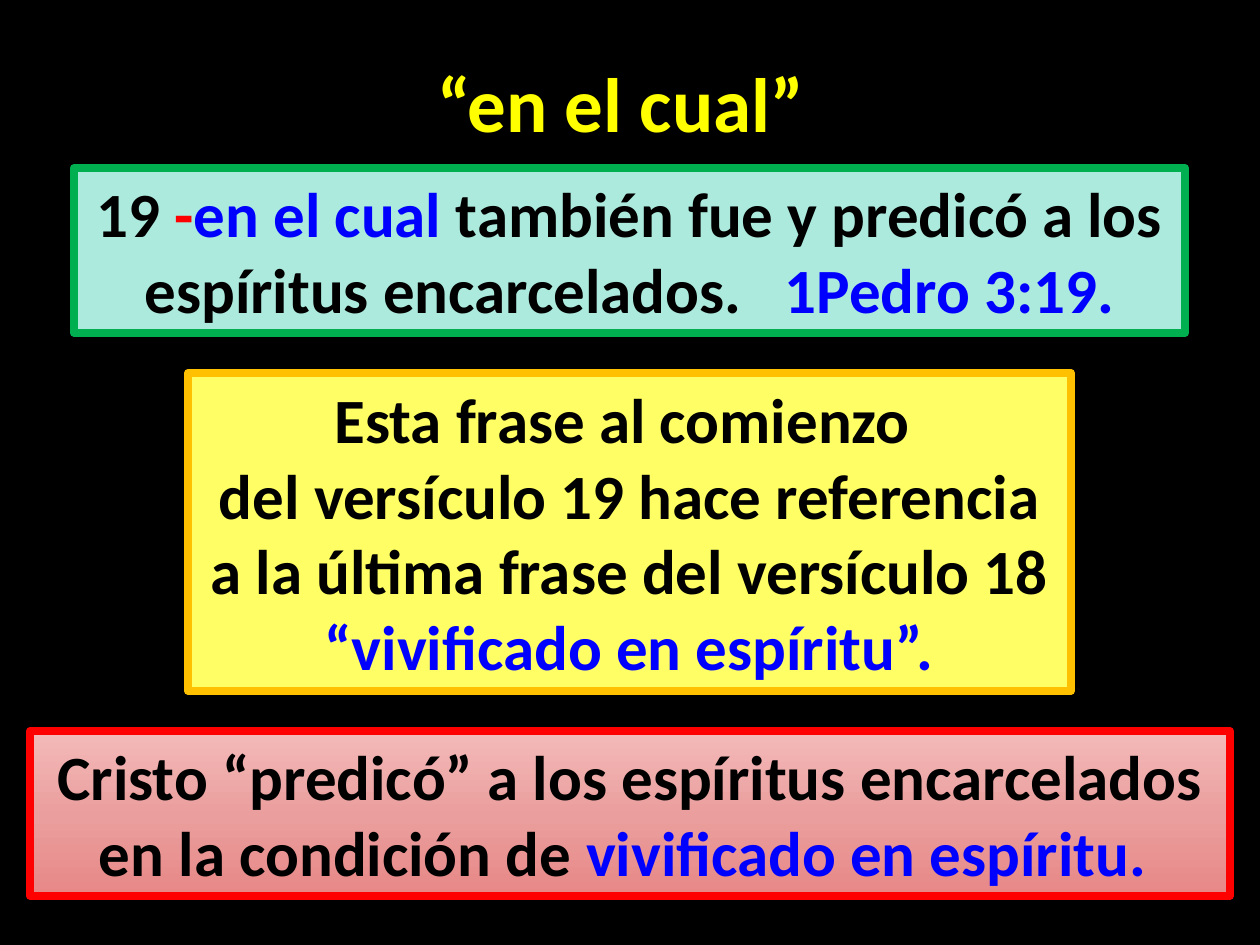
from copy import deepcopy

from lxml.etree import SubElement
from pptx import Presentation
from pptx.dml.color import RGBColor
from pptx.enum.shapes import MSO_SHAPE
from pptx.enum.text import MSO_AUTO_SIZE, PP_ALIGN
from pptx.oxml.ns import qn
from pptx.util import Pt

EMU_PER_PX = 914400 / 126
COLORS = {
    "background": "000000",
    "title": "FFFF00",
    "body": "000000",
    "emphasis": "0000FE",
    "dash": "FF0000",
    "verse_fill": "ACEADD",
    "verse_border": "00B050",
    "comment_fill": "FFFF65",
    "comment_border": "FFC000",
    "conclusion_top": "F3BAB9",
    "conclusion_middle": "EA9E9D",
    "conclusion_bottom": "E78887",
    "conclusion_border": "FF0000",
}


def px(length):
    return round(length * EMU_PER_PX)


def rgb(color):
    return RGBColor.from_string(COLORS[color])


def outline_run(run, color):
    """Give the letters a thin line in their own colour."""
    properties = run.font._element
    line = SubElement(properties, qn("a:ln"), w=str(Pt(0.75)))
    fill = SubElement(line, qn("a:solidFill"))
    SubElement(fill, qn("a:srgbClr"), val=COLORS[color])
    properties.insert(0, line)


def write_paragraphs(frame, paragraphs, size):
    """Fill the frame; each paragraph is a list of (text, colour) pairs."""
    for index, pieces in enumerate(paragraphs):
        paragraph = frame.add_paragraph() if index else frame.paragraphs[0]
        paragraph.alignment = PP_ALIGN.CENTER
        for text, color in pieces:
            run = paragraph.add_run()
            run.text = text
            run.font.name = "Calibri"
            run.font.size = Pt(size)
            run.font.bold = True
            run.font.color.rgb = rgb(color)
            outline_run(run, color)
    frame.auto_size = MSO_AUTO_SIZE.SHAPE_TO_FIT_TEXT


def fill_gradient(fill, stops):
    """Fill from top to bottom with three (position, colour) stops."""
    fill.gradient()
    fill.gradient_angle = 270
    first = fill.gradient_stops[0]._gs
    first.addnext(deepcopy(first))
    for stop, (position, color) in zip(fill.gradient_stops, stops):
        stop.position = position
        stop.color.rgb = rgb(color)


def add_title(slide, box, text):
    title = slide.shapes.add_textbox(*map(px, box))
    title.text_frame.word_wrap = False
    write_paragraphs(title.text_frame, [[(text, "title")]], 44)


def add_panel(slide, box, fill, border, paragraphs):
    panel = slide.shapes.add_shape(MSO_SHAPE.RECTANGLE, *map(px, box))
    panel.shadow.inherit = False
    if isinstance(fill, list):
        fill_gradient(panel.fill, fill)
    else:
        panel.fill.solid()
        panel.fill.fore_color.rgb = rgb(fill)
    panel.line.color.rgb = rgb(border)
    panel.line.width = Pt(4.5)
    panel.text_frame.word_wrap = True
    write_paragraphs(panel.text_frame, paragraphs, 36)


def main():
    presentation = Presentation()
    presentation.slide_width, presentation.slide_height = px(1260), px(945)
    slide = presentation.slides.add_slide(presentation.slide_layouts[6])
    slide.background.fill.solid()
    slide.background.fill.fore_color.rgb = rgb("background")

    add_panel(slide, (74, 168, 1111, 165), "verse_fill", "verse_border", [[
        ("19", "body"),
        (" -", "dash"),
        ("en el cual ", "emphasis"),
        ("también fue y predicó a los espíritus encarcelados.   ", "body"),
        ("1Pedro 3:19.", "emphasis"),
    ]])
    add_title(slide, (423, 49, 413, 106), "“en el cual” ")
    add_panel(slide, (188, 373, 883, 318), "comment_fill", "comment_border", [
        [("Esta frase al comienzo ", "body")],
        [
            ("del versículo 19 hace referencia a la última frase del versículo 18 ", "body"),
            ("“vivificado en espíritu”.", "emphasis"),
        ],
    ])
    conclusion_fill = [
        (0, "conclusion_top"),
        (0.52, "conclusion_middle"),
        (1, "conclusion_bottom"),
    ]
    add_panel(slide, (30, 731, 1200, 165), conclusion_fill, "conclusion_border", [[
        ("Cristo “predicó” a los espíritus encarcelados en la condición de ", "body"),
        ("vivificado en espíritu. ", "emphasis"),
    ]])
    presentation.save("out.pptx")


if __name__ == "__main__":
    main()
